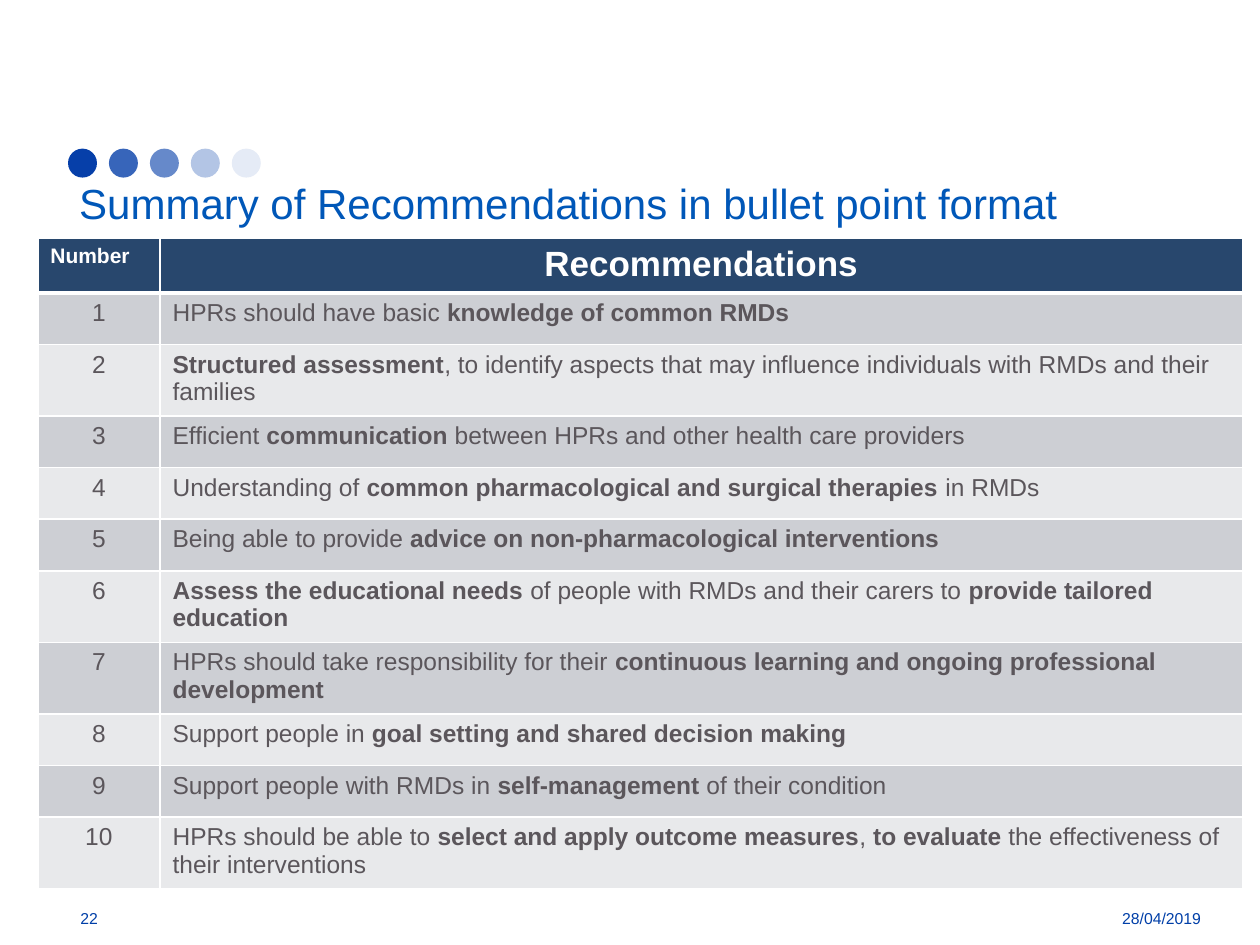
"""Build the slide that summarises the ten recommendations in a table."""
from lxml import etree
from pptx import Presentation
from pptx.dml.color import RGBColor
from pptx.enum.shapes import MSO_SHAPE
from pptx.enum.text import MSO_ANCHOR, PP_ALIGN
from pptx.oxml.ns import qn
from pptx.util import Inches, Pt

OVAL = MSO_SHAPE.OVAL
MIDDLE, BOTTOM = MSO_ANCHOR.MIDDLE, MSO_ANCHOR.BOTTOM
LEFT, CENTER, RIGHT = PP_ALIGN.LEFT, PP_ALIGN.CENTER, PP_ALIGN.RIGHT
FONT = "Arial"
COLORS = {
    "dot": "063FA9", "title": "0057B8", "footer": "003FA8", "header": "28476D",
    "odd": "CDCFD4", "even": "E8E9EB", "body": "5B565B", "white": "FFFFFF",
}

TITLE = "Summary of Recommendations in bullet point format"
PAGE, DATE = "22", "28/04/2019"
HEADERS = [("Number", 12, LEFT), ("Recommendations", 20, CENTER)]
RECOMMENDATIONS = [
    "HPRs should have basic **knowledge of common RMDs**",
    "**Structured assessment**, to identify aspects that may influence individuals "
    "with RMDs and their families",
    "Efficient **communication** between HPRs and other health care providers",
    "Understanding of **common pharmacological and surgical therapies **in RMDs",
    "Being able to provide **advice on non-pharmacological interventions**",
    "**Assess the educational needs **of people with RMDs and their carers to "
    "**provide tailored education**",
    "HPRs should take responsibility for their** continuous learning and ongoing "
    "professional development**",
    "Support people in **goal setting and shared decision making**",
    "Support people with RMDs in** self-management **of their condition",
    "HPRs should be able to **select and apply outcome measures**, **to evaluate** "
    "the effectiveness of their interventions",
]
DOT_ALPHAS = [100, 80, 61, 30, 10]
DOT_LEFT, DOT_TOP, DOT_SIZE, DOT_SPAN = 0.54, 1.18, 0.23, 1.3
TABLE_LEFT, TABLE_TOP = 0.3, 1.89
COLUMN_WIDTHS = [0.97, 8.59]
HEADER_HEIGHT, ROW_HEIGHT = 0.4, 0.41


def rgb(name):
    return RGBColor.from_string(COLORS[name])


def write(tf, text, size, color, align=LEFT, bold=False):
    p = tf.paragraphs[0]
    p.alignment = align
    for i, part in enumerate(text.split("**")):
        if part:
            r = p.add_run()
            r.text = part
            r.font.name, r.font.size = FONT, Pt(size)
            r.font.bold = bold or i % 2 == 1
            r.font.color.rgb = rgb(color)


def add_text(s, box, text, size, color, anchor, align=LEFT):
    tf = s.shapes.add_textbox(*map(Inches, box)).text_frame
    tf.word_wrap = True
    tf.vertical_anchor = anchor
    write(tf, text, size, color, align)


def add_dots(s):
    pitch = DOT_SPAN / (len(DOT_ALPHAS) - 1)
    for i, alpha in enumerate(DOT_ALPHAS):
        dot = s.shapes.add_shape(OVAL, Inches(DOT_LEFT + i * pitch), Inches(DOT_TOP),
                                 Inches(DOT_SIZE), Inches(DOT_SIZE))
        dot.shadow.inherit = False
        dot.line.fill.background()
        dot.fill.solid()
        dot.fill.fore_color.rgb = rgb("dot")
        color = dot.fill._xPr.find(qn("a:solidFill"))[0]
        etree.SubElement(color, qn("a:alpha"), val=str(alpha * 1000))


def set_borders(cell, widths):
    tc_pr = cell._tc.get_or_add_tcPr()
    for i, (side, width) in enumerate(widths.items()):
        line = etree.Element(qn(f"a:ln{side}"), w=str(Pt(width)))
        fill = etree.SubElement(line, qn("a:solidFill"))
        etree.SubElement(fill, qn("a:srgbClr"), val=COLORS["white"])
        tc_pr.insert(i, line)


def fill_cell(cell, fill, top, bottom, *text_args):
    cell.fill.solid()
    cell.fill.fore_color.rgb = rgb(fill)
    set_borders(cell, {"L": 1, "R": 1, "T": top, "B": bottom})
    write(cell.text_frame, *text_args)


def add_recommendations(s):
    count = len(RECOMMENDATIONS)
    table = s.shapes.add_table(
        count + 1, len(COLUMN_WIDTHS), Inches(TABLE_LEFT), Inches(TABLE_TOP),
        Inches(sum(COLUMN_WIDTHS)), Inches(HEADER_HEIGHT + count * ROW_HEIGHT)).table
    for column, width in zip(table.columns, COLUMN_WIDTHS):
        column.width = Inches(width)
    for i, row in enumerate(table.rows):
        row.height = Inches(ROW_HEIGHT if i else HEADER_HEIGHT)
    for col, (text, size, align) in enumerate(HEADERS):
        fill_cell(table.cell(0, col), "header", 1, 3, text, size, "white", align, True)
    for n, text in enumerate(RECOMMENDATIONS, 1):
        fill = "odd" if n % 2 else "even"
        top = 3 if n == 1 else 1
        fill_cell(table.cell(n, 0), fill, top, 1, str(n), 14, "body", CENTER)
        fill_cell(table.cell(n, 1), fill, top, 1, text, 14, "body")


def main():
    prs = Presentation()
    prs.slide_width, prs.slide_height = Inches(10), Inches(7.5)
    s = prs.slides.add_slide(prs.slide_layouts[6])
    add_dots(s)
    add_text(s, (0.53, 1.35, 9.11, 0.51), TITLE, 24, "title", BOTTOM)
    add_text(s, (0.54, 7.09, 0.96, 0.4), PAGE, 9, "footer", MIDDLE)
    add_text(s, (8.29, 7.09, 1.34, 0.4), DATE, 9, "footer", MIDDLE, RIGHT)
    add_recommendations(s)
    prs.save("out.pptx")


if __name__ == "__main__":
    main()
